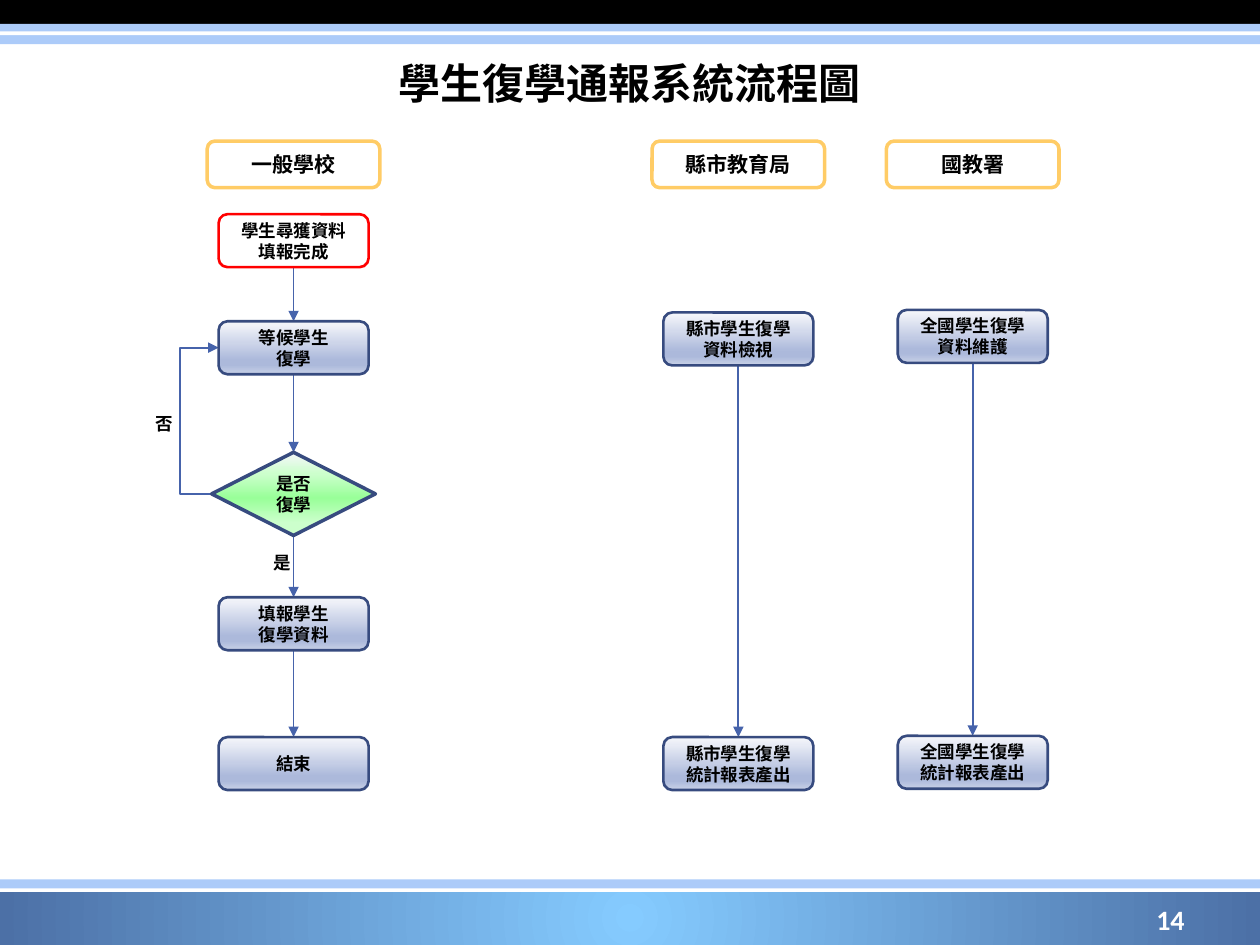
from lxml.etree import SubElement
from pptx import Presentation
from pptx.dml.color import RGBColor
from pptx.enum.shapes import MSO_CONNECTOR, MSO_SHAPE
from pptx.enum.text import MSO_ANCHOR, PP_ALIGN
from pptx.oxml import parse_xml
from pptx.oxml.ns import nsdecls, qn
from pptx.util import Inches, Pt

CJK = "Noto Sans CJK SC"
BLUE = [(0, "F6F7FB"), (74, "ACB9DB"), (83, "ACB9DB"), (100, "C8D1E7")]
GREEN = [(0, "F6F7FB"), (26, "CCFFCC"), (55, "99FF99"), (85, "CCFFCC")]
FOOTER = [(0, "85CBFF"), (100, "4C70A6")]
LINEAR = '<a:lin ang="5400000" scaled="0"/>'
RADIAL = ('<a:path path="circle"><a:fillToRect l="50000" t="50000" '
          'r="50000" b="50000"/></a:path>')


def paint(shape, fill=None, line=None, width=1.0, direction=LINEAR):
    """Fill with a hex colour or a list of gradient stops, and set the outline."""
    shape.shadow.inherit = False
    if isinstance(fill, list):
        stops = "".join(f'<a:gs pos="{pos * 1000}"><a:srgbClr val="{color}"/></a:gs>'
                        for pos, color in fill)
        shape._element.spPr.find(qn("a:prstGeom")).addnext(parse_xml(
            f'<a:gradFill {nsdecls("a")} rotWithShape="1"><a:gsLst>{stops}</a:gsLst>'
            f'{direction}</a:gradFill>'))
    elif fill:
        shape.fill.solid()
        shape.fill.fore_color.rgb = RGBColor.from_string(fill)
    else:
        shape.fill.background()
    if line:
        shape.line.color.rgb = RGBColor.from_string(line)
        shape.line.width = Pt(width)
    else:
        shape.line.fill.background()


def write(shape, text, size=10, color="000000", font=CJK, align=PP_ALIGN.CENTER,
          anchor=MSO_ANCHOR.MIDDLE, insets=(0.1, 0, 0.1, 0)):
    frame = shape.text_frame
    frame.word_wrap = True
    frame.vertical_anchor = anchor
    (frame.margin_left, frame.margin_top,
     frame.margin_right, frame.margin_bottom) = map(Inches, insets)
    frame.text = text
    for paragraph in frame.paragraphs:
        paragraph.alignment = align
        for run in paragraph.runs:
            run.font.name = font
            run.font.size = Pt(size)
            run.font.bold = True
            run.font.color.rgb = RGBColor.from_string(color)
            SubElement(run._r.rPr, qn("a:ea"), typeface=CJK)


deck = Presentation()
deck.slide_width, deck.slide_height = Inches(10), Inches(7.5)
slide = deck.slides.add_slide(deck.slide_layouts[6])
shapes = slide.shapes

# Header and footer bands: top, height, fill
for top, height, fill in [
    (0, 0.19, "000000"), (0.19, 0.16, "ACCBF9"), (0.25, 0.03, "FFFFFF"),
    (7.07, 0.43, FOOTER), (6.98, 0.1, "ACCBF9"), (7.05, 0.03, "FFFFFF"),
]:
    band = shapes.add_shape(MSO_SHAPE.RECTANGLE, 0, Inches(top),
                            deck.slide_width, Inches(height))
    paint(band, fill, direction=RADIAL)

# Title, page number and branch labels
for box, text, style in [
    ((0.5, 0.3, 9, 0.71), "學生復學通報系統流程圖", dict(size=24)),
    ((7.17, 7.1, 2.33, 0.4), "14",
     dict(size=16, color="FFFFFF", font="Calibri", align=PP_ALIGN.RIGHT)),
    ((1.14, 3.23, 0.24, 0.27), "否", dict(font="Arial", insets=(0.08, 0, 0, 0))),
    ((2.08, 4.33, 0.24, 0.27), "是", dict(font="Arial", insets=(0.08, 0, 0, 0))),
]:
    write(shapes.add_textbox(*map(Inches, box)), text, **style)

# Column centres
SCHOOL, COUNTY, NATIONAL = 2.33, 5.86, 7.72
STEP_W, STEP_H = 1.19, 0.42
DECISION_W, DECISION_H, DECISION_TOP = 1.3, 0.66, 3.59

# Arrows down the columns, then the loop back to waiting
decision_left = SCHOOL - DECISION_W / 2
decision_middle = DECISION_TOP + DECISION_H / 2
STRAIGHT, ELBOW = MSO_CONNECTOR.STRAIGHT, MSO_CONNECTOR.ELBOW
flows = [(STRAIGHT, center, start, center, end, 1) for center, start, end in [
    (SCHOOL, 2.13, 2.55), (SCHOOL, 2.97, 3.59), (SCHOOL, 4.25, 4.74),
    (SCHOOL, 5.16, 5.85), (COUNTY, 2.9, 5.85), (NATIONAL, 2.88, 5.84),
]]
flows.append((ELBOW, decision_left, decision_middle,
              SCHOOL - STEP_W / 2, 2.55 + STEP_H / 2, 1.25))
for kind, x1, y1, x2, y2, width in flows:
    arrow = shapes.add_connector(kind, *map(Inches, (x1, y1, x2, y2)))
    arrow.line.color.rgb = RGBColor.from_string("4663AB")
    arrow.line.width = Pt(width)
    SubElement(arrow.line._get_or_add_ln(), qn("a:tailEnd"), type="triangle")
    properties = arrow._element.spPr
    SubElement(properties, qn("a:effectLst"))
    if kind == ELBOW:
        bend = round(-0.25 / (x2 - x1) * 100000)
        guides = properties.find(qn("a:prstGeom")).get_or_add_avLst()
        SubElement(guides, qn("a:gd"), name="adj1", fmla=f"val {bend}")

# Column headings
for center, heading in [(SCHOOL, "一般學校"), (COUNTY, "縣市教育局"), (NATIONAL, "國教署")]:
    header = shapes.add_shape(MSO_SHAPE.ROUNDED_RECTANGLE, Inches(center - 1.37 / 2),
                              Inches(1.12), Inches(1.37), Inches(0.37))
    paint(header, line="FFCC66", width=2)
    write(header, heading, size=12)

# Process steps: column, top, text, fill, outline
for center, top, text, fill, outline in [
    (SCHOOL, 1.7, "學生尋獲資料\n填報完成", "FFFFFF", "FF0000"),
    (SCHOOL, 2.55, "等候學生\n復學", BLUE, "374B7F"),
    (SCHOOL, 4.74, "填報學生\n復學資料", BLUE, "374B7F"),
    (SCHOOL, 5.85, "結束", BLUE, "374B7F"),
    (COUNTY, 2.48, "縣市學生復學資料檢視", BLUE, "374B7F"),
    (COUNTY, 5.85, "縣市學生復學統計報表產出", BLUE, "374B7F"),
    (NATIONAL, 2.46, "全國學生復學資料維護", BLUE, "374B7F"),
    (NATIONAL, 5.84, "全國學生復學統計報表產出", BLUE, "374B7F"),
]:
    step = shapes.add_shape(MSO_SHAPE.ROUNDED_RECTANGLE, Inches(center - STEP_W / 2),
                            Inches(top), Inches(STEP_W), Inches(STEP_H))
    paint(step, fill, outline, 1.5)
    write(step, text)

# Decision
decision = shapes.add_shape(MSO_SHAPE.FLOWCHART_DECISION, Inches(decision_left),
                            Inches(DECISION_TOP), Inches(DECISION_W), Inches(DECISION_H))
paint(decision, GREEN, "374B7F", 2)
write(decision, "是否\n復學", insets=(0, 0, 0, 0))

deck.save("out.pptx")
